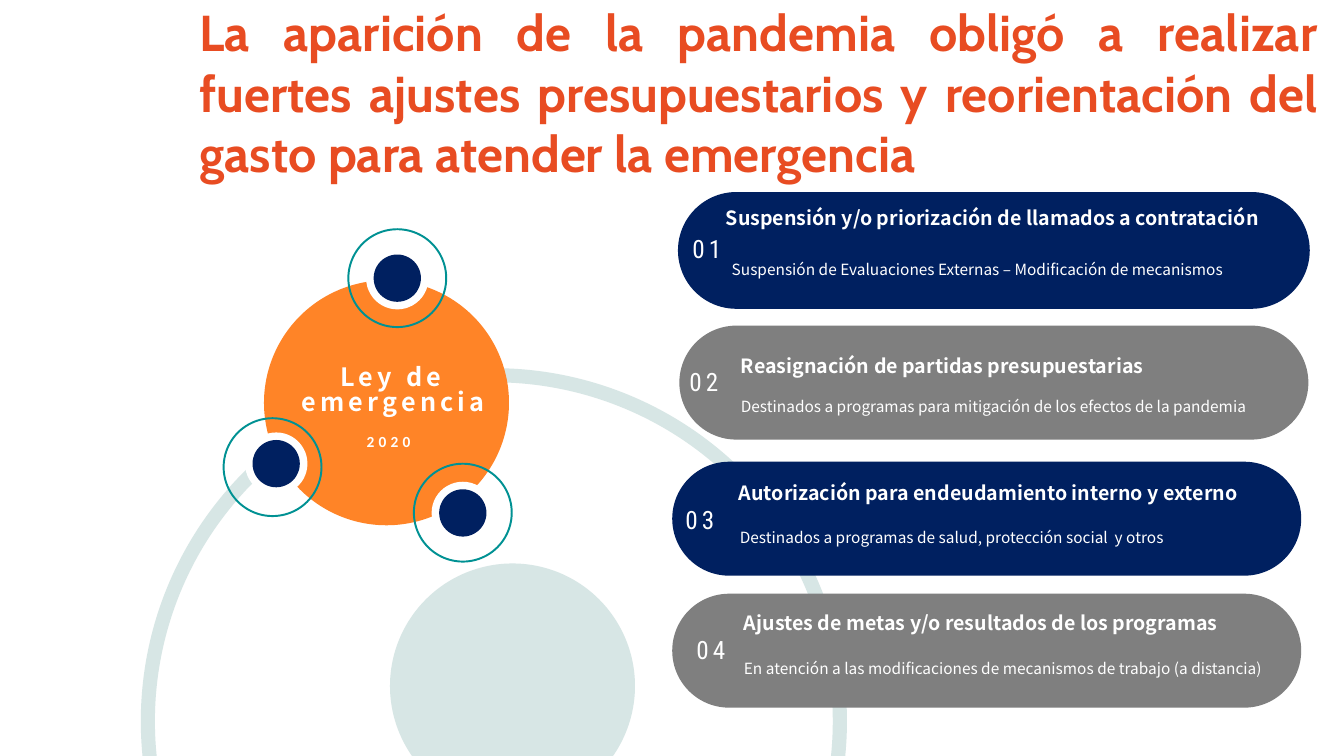
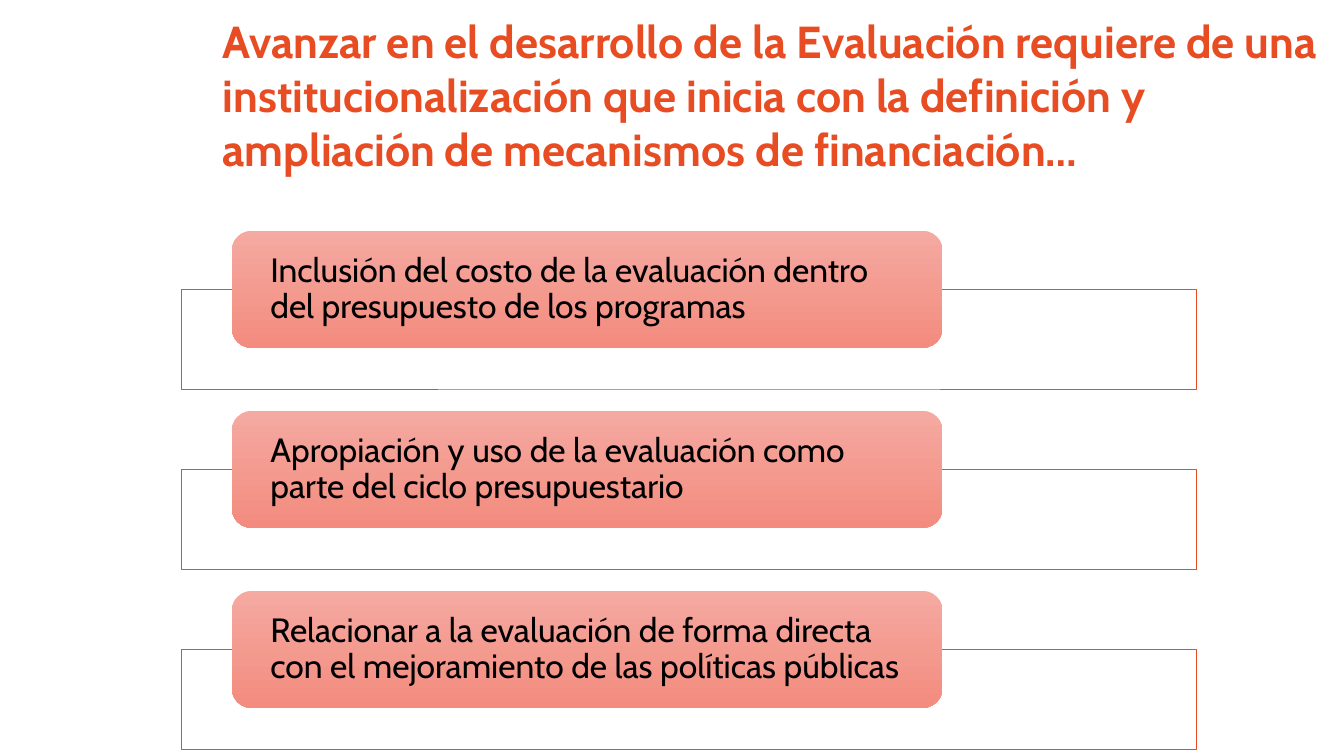
from typing import NamedTuple

from lxml import etree
from pptx import Presentation
from pptx.dml.color import RGBColor
from pptx.enum import shapes, text
from pptx.oxml import ns
from pptx.util import Pt

COLORS = {
    "title": "E84C22",
    "navy": "002060",
    "gray": "7F7F7F",
    "orange": "FF8427",
    "teal": "009193",
    "mist": "D7E6E5",
    "white": "FFFFFF",
    "black": "000000",
    "card_top": "F4AAA1",
    "card_bottom": "F48B7F",
}
TITLE_FONT, BODY_FONT = "Cabin", "Noto Sans CJK SC"
OVAL = shapes.MSO_SHAPE.OVAL
ROUNDED = shapes.MSO_SHAPE.ROUNDED_RECTANGLE
TOP, MIDDLE, BOTTOM = (text.MSO_ANCHOR.TOP, text.MSO_ANCHOR.MIDDLE,
                       text.MSO_ANCHOR.BOTTOM)
LEFT, CENTER, JUSTIFY = (text.PP_ALIGN.LEFT, text.PP_ALIGN.CENTER,
                         text.PP_ALIGN.JUSTIFY)


class Box(NamedTuple):
    x: float
    y: float
    w: float
    h: float


class Point(NamedTuple):
    x: float
    y: float


class Node(NamedTuple):
    dot: Point
    ring: Point


class Pill(NamedTuple):
    number: str
    heading: str
    detail: str
    color: str
    at: Point
    number_at: Point
    heading_at: Point
    detail_at: Point


NODES = [
    Node(Point(330.6, 366.4), Point(330.6, 366.2)),
    Node(Point(283.8, 198.7), Point(283.8, 198.7)),
    Node(Point(197.3, 331.2), Point(194.7, 333.7)),
]

PILLS = [
    Pill("01", "Suspensión y/o priorización de llamados a contratación",
         "Suspensión de Evaluaciones Externas – Modificación de mecanismos",
         "navy", Point(485.3, 138.2), Point(487.4, 163.4),
         Point(518.4, 118.1), Point(522.7, 172.1)),
    Pill("02", "Reasignación de partidas presupuestarias",
         "Destinados a programas para mitigación de los efectos de la pandemia",
         "gray", Point(485.3, 232.6), Point(485.3, 257.8),
         Point(529.2, 223.9), Point(529.2, 270)),
    Pill("03", "Autorización para endeudamiento interno y externo",
         "Destinados a programas de salud, protección social  y otros",
         "navy", Point(480.2, 329.8), Point(482.4, 356.4),
         Point(527.8, 314.6), Point(528.5, 363.6)),
    Pill("04", "Ajustes de metas y/o resultados de los programas",
         "En atención a las modificaciones de mecanismos de trabajo (a distancia)",
         "gray", Point(480.2, 424.1), Point(490.3, 449.3),
         Point(531.4, 406.8), Point(531.4, 457.2)),
]

ACTIONS = [
    "Inclusión del costo de la evaluación dentro del presupuesto de los programas",
    "Apropiación y uso de la evaluación como parte del ciclo presupuestario",
    "Relacionar a la evaluación de forma directa con el mejoramiento de las "
    "políticas públicas",
]
ACTION_STEP = 128.6


def rgb(name: str) -> RGBColor:
    return RGBColor.from_string(COLORS[name])


def around(c: Point, d: float) -> Box:
    """Square of side d centred on c."""
    return Box(c.x - d / 2, c.y - d / 2, d, d)


def add_shape(s, kind, box: Box, fill: str | None = None,
              line: str | None = None, width: float = 1):
    sp = s.shapes.add_shape(kind, *map(Pt, box))
    sp.shadow.inherit = False
    if fill:
        sp.fill.solid()
        sp.fill.fore_color.rgb = rgb(fill)
    else:
        sp.fill.background()
    if line:
        sp.line.color.rgb = rgb(line)
        sp.line.width = Pt(width)
    else:
        sp.line.fill.background()
    return sp


def write(sp, content: str, *, size: float, font: str = BODY_FONT,
          color: str = "white", bold: bool = False, align=LEFT, anchor=TOP,
          margins: tuple = (0, 0), leading: float = 1, tracking: int = 0,
          wrap: bool = True) -> None:
    """Fill a shape with one paragraph; margins are (sides, top and bottom)."""
    tf = sp.text_frame
    tf.word_wrap = wrap
    tf.vertical_anchor = anchor
    tf.margin_left = tf.margin_right = Pt(margins[0])
    tf.margin_top = tf.margin_bottom = Pt(margins[1])
    p = tf.paragraphs[0]
    p.alignment = align
    p.line_spacing = leading
    r = p.add_run()
    r.text = content
    r.font.name, r.font.size, r.font.bold = font, Pt(size), bold
    r.font.color.rgb = rgb(color)
    if tracking:
        r.font._element.set("spc", str(tracking * 100))


def add_text(s, box: Box, content: str, **style) -> None:
    write(s.shapes.add_textbox(*map(Pt, box)), content, **style)


def add_title(s, box: Box, content: str, size: float, align=LEFT) -> None:
    add_text(s, box, content, size=size, font=TITLE_FONT, color="title",
             bold=True, align=align, anchor=MIDDLE, margins=(7.2, 3.6))


def add_node(s, node: Node) -> None:
    add_shape(s, OVAL, around(node.dot, 44.6), "white")
    add_shape(s, OVAL, around(node.dot, 33.8), "navy")
    add_shape(s, OVAL, around(node.ring, 69.9), line="teal", width=1.4)


def add_pill(s, pill: Pill) -> None:
    sp = add_shape(s, ROUNDED, Box(*pill.at, 449.3, 81.4), pill.color,
                   "navy" if pill.number == "01" else None, 2)
    sp.adjustments[0] = 0.5
    add_text(s, Box(*pill.heading_at, 408, 46), pill.heading, size=14,
             bold=True, anchor=BOTTOM)
    add_text(s, Box(*pill.detail_at, 412, 37.4), pill.detail, size=11,
             anchor=MIDDLE, leading=1.2)
    add_text(s, Box(*pill.number_at, 39.6, 28.8), pill.number, size=18,
             font="Roboto Condensed", margins=(7.2, 3.6), tracking=3,
             wrap=False)


def add_action(s, y: float, content: str) -> None:
    frame = add_shape(s, shapes.MSO_SHAPE.RECTANGLE,
                      Box(129.6, y + 41.7, 725, 71.3), "white", "title", 0.5)
    # Frame fill is 90% opaque
    clr = frame._element.spPr.find(ns.qn("a:solidFill"))[0]
    etree.SubElement(clr, ns.qn("a:alpha")).set("val", "90000")

    card = add_shape(s, ROUNDED, Box(165.6, y, 507.6, 83.5))
    card.fill.gradient()
    card.fill.gradient_angle = 270
    for stop, name in zip(card.fill.gradient_stops, ("card_top", "card_bottom")):
        stop.color.rgb = rgb(name)
    first, last = card.fill.gradient_stops
    first.position, last.position = 0, 1
    write(card, content, size=24, font=TITLE_FONT, color="black",
          anchor=MIDDLE, margins=(23.5, 0), leading=0.9)


def build_emergency(s) -> None:
    add_title(s, Box(135.4, 13.7, 812.9, 104.4),
              "La aparición de la pandemia obligó a realizar fuertes ajustes "
              "presupuestarios y reorientación del gasto para atender la "
              "emergencia", 36, JUSTIFY)

    # Large ring behind the central circle
    ring = add_shape(s, shapes.MSO_SHAPE.DONUT,
                     around(Point(352.8, 515.2), 504.4), "mist")
    ring.adjustments[0] = 0.02

    # Central circle
    add_shape(s, OVAL, Box(188.6, 200.2, 175, 175), "orange")
    add_text(s, Box(201.9, 224, 157.8, 110.9), "Ley de emergencia", size=18,
             bold=True, align=CENTER, anchor=MIDDLE, leading=0.83, tracking=3)
    add_text(s, Box(231.1, 305.3, 92.9, 21.6), "2020", size=11,
             font="Calibri", bold=True, align=CENTER, margins=(7.2, 3.6),
             tracking=3)

    for node in NODES:
        add_node(s, node)
    for pill in PILLS:
        add_pill(s, pill)

    # Lower circle
    add_shape(s, OVAL, Box(278.6, 402.5, 175, 175), "mist")


def build_financing(s) -> None:
    add_title(s, Box(151.9, 31.7, 807.8, 72),
              "Avanzar en el desarrollo de la Evaluación requiere de una "
              "institucionalización que inicia con la definición y ampliación "
              "de mecanismos de financiación…", 32)
    for i, action in enumerate(ACTIONS):
        add_action(s, 164.9 + i * ACTION_STEP, action)


def main() -> None:
    prs = Presentation()
    prs.slide_width, prs.slide_height = Pt(960), Pt(540)
    for build in (build_emergency, build_financing):
        build(prs.slides.add_slide(prs.slide_layouts[6]))
    prs.save("out.pptx")


if __name__ == "__main__":
    main()
